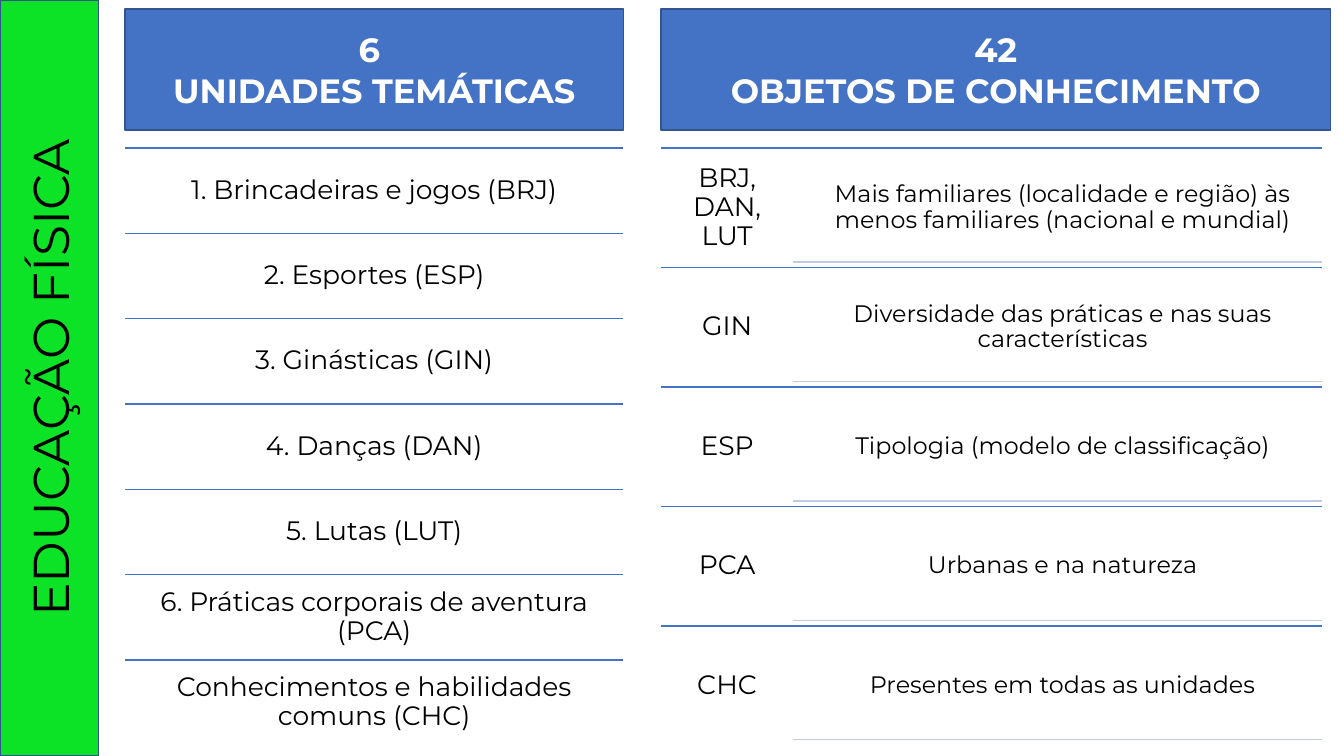
import pptx
import pptx.dml.color
import pptx.enum.shapes
import pptx.enum.text
import pptx.oxml.ns
import pptx.util
from lxml import etree
from dataclasses import dataclass

Cm, Pt = pptx.util.Cm, pptx.util.Pt

SUBJECT = "EDUCAÇÃO FÍSICA"
UNITS_HEADING = ("6 ", "UNIDADES TEMÁTICAS")
UNITS = [
    "1. Brincadeiras e jogos (BRJ)",
    "2. Esportes (ESP)",
    "3. Ginásticas (GIN)",
    "4. Danças (DAN)",
    "5. Lutas (LUT)",
    "6. Práticas corporais de aventura (PCA)",
    "Conhecimentos e habilidades comuns (CHC)",
]
OBJECTS_HEADING = ("42", "OBJETOS DE CONHECIMENTO")
OBJECTS = [
    ("BRJ, DAN, LUT", "Mais familiares (localidade e região) às menos familiares (nacional e mundial)"),
    ("GIN", "Diversidade das práticas e nas suas características"),
    ("ESP", "Tipologia (modelo de classificação)"),
    ("PCA", "Urbanas e na natureza"),
    ("CHC", "Presentes em todas as unidades"),
]


@dataclass(frozen=True)
class Theme:
    font: str = "Montserrat"
    ink: str = "000000"
    white: str = "FFFFFF"
    blue: str = "4472C4"
    blue_edge: str = "325491"
    green: str = "0DE326"
    green_edge: str = "31538F"
    pale_rule: str = "C1C9E4"
    subject_size: float = 36
    heading_size: float = 24
    label_size: float = 19
    detail_size: float = 17
    rule_width: float = 1


THEME = Theme()

# Lengths in centimetres
SLIDE_WIDTH, SLIDE_HEIGHT = 33.87, 19.05
SUBJECT_WIDTH = 2.49
HEADING_TOP, HEADING_HEIGHT = 0.23, 3.05
ROWS_TOP, ROWS_HEIGHT = 3.73, 15.05
UNITS_LEFT, UNITS_WIDTH = 3.15, 12.56
OBJECTS_LEFT, OBJECTS_WIDTH = 16.66, 16.66
OBJECTS_HEADING_WIDTH = 16.87
CODE_WIDTH = 3.33
DETAIL_INDENT, DETAIL_GAP = 0.25, 0.14
LABEL_INSET, DETAIL_INSET = 0.2, 0.18


def rgb(code):
    return pptx.dml.color.RGBColor.from_string(code)


def write(frame, lines, size, color, insets=(0.25, 0.13), spacing=1.0, bold=False):
    """Fill a frame with centred lines; insets are (horizontal, vertical) in cm."""
    across, down = map(Cm, insets)
    frame_format = {
        "word_wrap": True,
        "auto_size": pptx.enum.text.MSO_AUTO_SIZE.NONE,
        "vertical_anchor": pptx.enum.text.MSO_ANCHOR.MIDDLE,
        "margin_left": across, "margin_right": across,
        "margin_top": down, "margin_bottom": down,
    }
    for name, value in frame_format.items():
        setattr(frame, name, value)
    frame.text = "\n".join(lines)
    for paragraph in frame.paragraphs:
        paragraph.alignment = pptx.enum.text.PP_ALIGN.CENTER
        paragraph.line_spacing = spacing
        font = paragraph.runs[0].font
        for name, value in {"name": THEME.font, "size": Pt(size), "bold": bold}.items():
            setattr(font, name, value)
        font.color.rgb = rgb(color)


def add_panel(slide, left, top, width, height, fill, edge):
    panel = slide.shapes.add_shape(
        pptx.enum.shapes.MSO_SHAPE.RECTANGLE, Cm(left), Cm(top), Cm(width), Cm(height))
    panel.shadow.inherit = False
    panel.fill.solid()
    panel.fill.fore_color.rgb = rgb(fill)
    panel.line.color.rgb = rgb(edge)
    panel.line.width = Pt(THEME.rule_width)
    return panel


def add_subject(slide):
    """Add the side bar as a rectangle, since title placeholders may ignore vertical text."""
    subject = add_panel(slide, 0, 0, SUBJECT_WIDTH, SLIDE_HEIGHT,
                        THEME.green, THEME.green_edge)
    write(subject.text_frame, [SUBJECT], THEME.subject_size, THEME.ink)
    subject.text_frame._txBody.bodyPr.set("vert", "vert270")


def add_heading(slide, lines, left, width):
    heading = add_panel(slide, left, HEADING_TOP, width, HEADING_HEIGHT,
                        THEME.blue, THEME.blue_edge)
    write(heading.text_frame, lines, THEME.heading_size, THEME.white, bold=True)


def add_rule(slide, left, right, y, color):
    rule = slide.shapes.add_connector(
        pptx.enum.shapes.MSO_CONNECTOR.STRAIGHT, Cm(left), Cm(y), Cm(right), Cm(y))
    rule.line.color.rgb = rgb(color)
    rule.line.width = Pt(THEME.rule_width)
    etree.SubElement(rule._element.spPr, pptx.oxml.ns.qn("a:effectLst"))


def add_text(slide, text, left, top, width, height, size, inset):
    box = slide.shapes.add_textbox(Cm(left), Cm(top), Cm(width), Cm(height))
    write(box.text_frame, [text], size, THEME.ink, (inset, inset), spacing=0.9)


def add_units(slide):
    add_heading(slide, UNITS_HEADING, UNITS_LEFT, UNITS_WIDTH)
    pitch = ROWS_HEIGHT / len(UNITS)
    for row, unit in enumerate(UNITS):
        top = ROWS_TOP + row * pitch
        add_rule(slide, UNITS_LEFT, UNITS_LEFT + UNITS_WIDTH, top, THEME.blue)
        add_text(slide, unit, UNITS_LEFT, top, UNITS_WIDTH, pitch,
                 THEME.label_size, LABEL_INSET)


def add_objects(slide):
    add_heading(slide, OBJECTS_HEADING, OBJECTS_LEFT, OBJECTS_HEADING_WIDTH)
    pitch = ROWS_HEIGHT / len(OBJECTS)
    right = OBJECTS_LEFT + OBJECTS_WIDTH
    details_left = OBJECTS_LEFT + CODE_WIDTH
    detail_left = details_left + DETAIL_INDENT
    detail_height = pitch - 2 * DETAIL_GAP
    for row, (code, detail) in enumerate(OBJECTS):
        top = ROWS_TOP + row * pitch
        detail_top = top + DETAIL_GAP
        add_rule(slide, OBJECTS_LEFT, right, top, THEME.blue)
        add_text(slide, code, OBJECTS_LEFT, top, CODE_WIDTH, pitch,
                 THEME.label_size, LABEL_INSET)
        add_text(slide, detail, detail_left, detail_top, right - detail_left,
                 detail_height, THEME.detail_size, DETAIL_INSET)
        add_rule(slide, details_left, right, detail_top + detail_height, THEME.pale_rule)


def main():
    deck = pptx.Presentation()
    deck.slide_width, deck.slide_height = Cm(SLIDE_WIDTH), Cm(SLIDE_HEIGHT)
    blank = deck.slide_layouts[6]
    slide = deck.slides.add_slide(blank)
    add_subject(slide)
    add_units(slide)
    add_objects(slide)
    deck.save("out.pptx")


if __name__ == "__main__":
    main()
